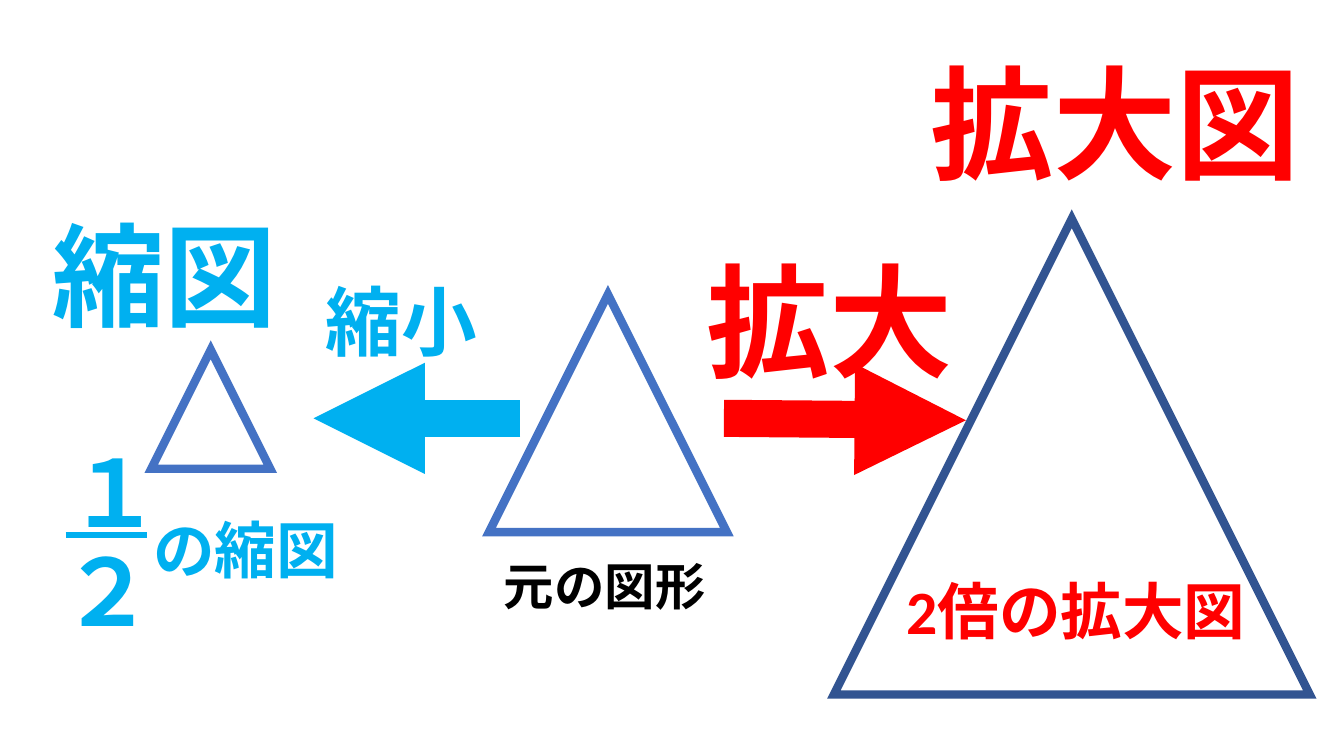
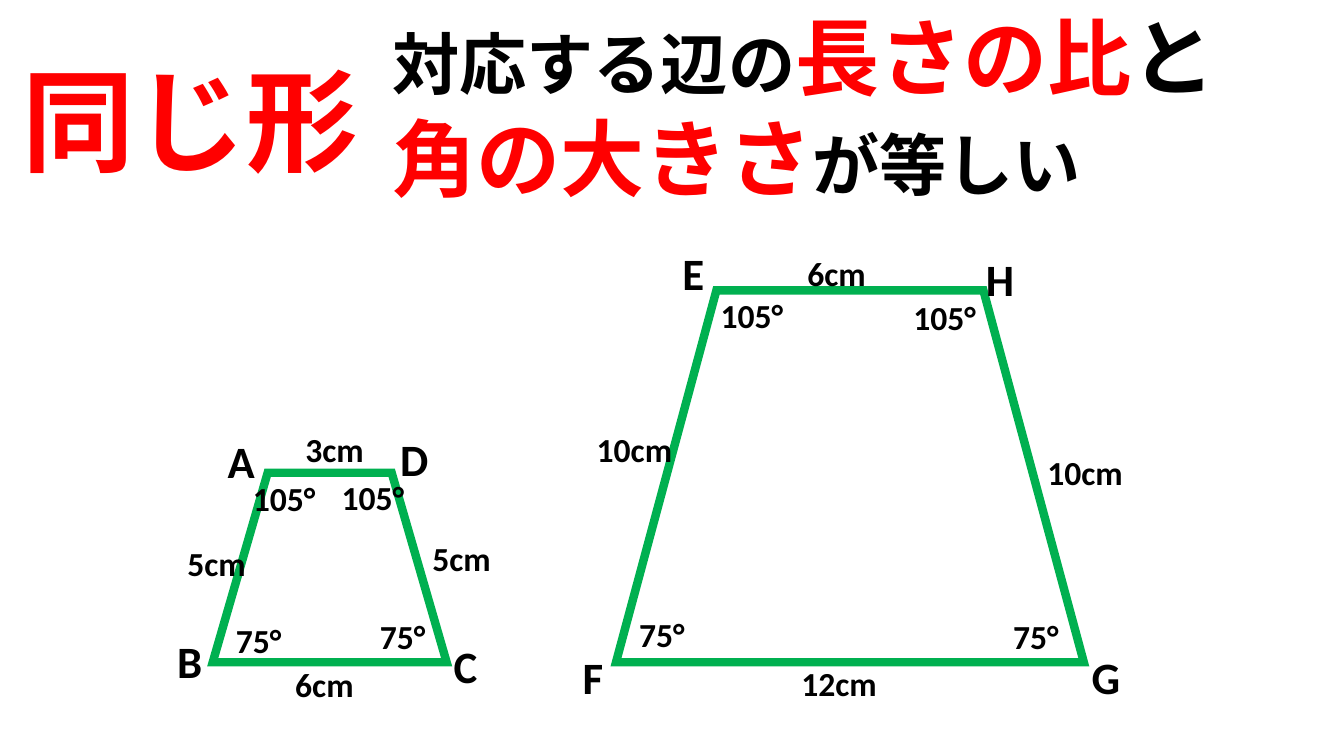
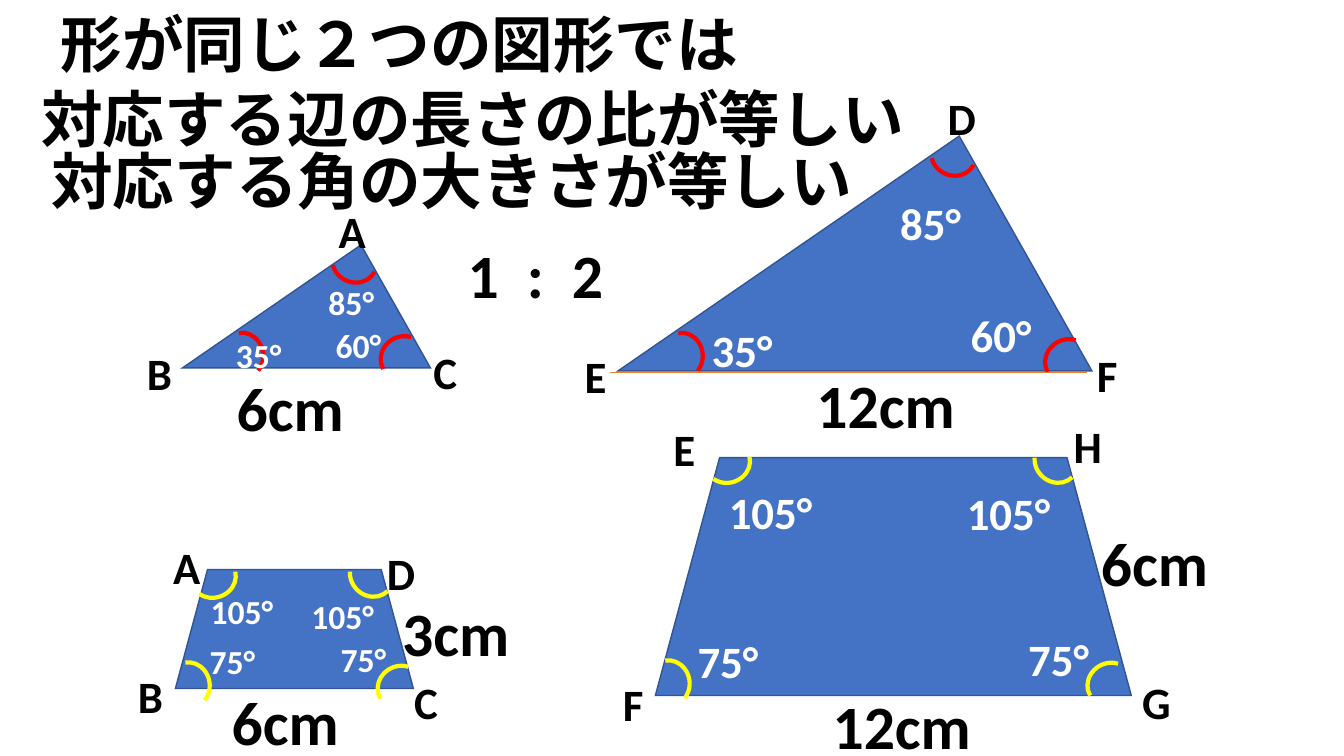
from lxml import etree
from pptx import Presentation
from pptx import util as u
from pptx.dml.color import RGBColor
from pptx.enum import lang, shapes as kinds, text as t
from pptx.oxml.ns import qn

# Shared look
BLACK = RGBColor(0x00, 0x00, 0x00)
WHITE = RGBColor(0xFF, 0xFF, 0xFF)
RED = RGBColor(0xFF, 0x00, 0x00)
SKY = RGBColor(0x00, 0xB0, 0xF0)
BLUE = RGBColor(0x44, 0x72, 0xC4)
NAVY = RGBColor(0x32, 0x54, 0x91)
GREEN = RGBColor(0x00, 0xB0, 0x50)
YELLOW = RGBColor(0xFF, 0xFF, 0x00)
ORANGE = RGBColor(0xED, 0x7D, 0x31)
FONT = "Calibri"
TITLE_ONLY, BLANK = 5, 6

TRIANGLE = kinds.MSO_SHAPE.ISOSCELES_TRIANGLE
TRAPEZOID = kinds.MSO_SHAPE.TRAPEZOID
ARC = kinds.MSO_SHAPE.ARC

# Grid of square cells: 75 rows, 133.33 columns
CELL = u.Inches(7.5) / 75
VERTEX_WIDTH = 6.3
LABEL_WIDTHS = {(24, 3): 10.4, (24, 4): 12.6, (32, 3): 13.4,
                (32, 4): 16.1, (44, 3): 18.3, (44, 4): 18.3}

# Rotation of the angle mark in each corner
BOTTOM_LEFT, BOTTOM_RIGHT = 350.6, 239.1
TOP_LEFT, TOP_RIGHT, APEX = 76.3, 135.4, 117


def cells(*counts):
    return [u.Emu(round(count * CELL)) for count in counts]


# Text
def write(shape, paragraphs, wrap=True):
    """Each paragraph is a list of (text, size, colour) runs."""
    frame = shape.text_frame
    frame.word_wrap = wrap
    frame.auto_size = t.MSO_AUTO_SIZE.SHAPE_TO_FIT_TEXT
    frame.vertical_anchor = t.MSO_ANCHOR.TOP
    for index, runs in enumerate(paragraphs):
        paragraph = frame.add_paragraph() if index else frame.paragraphs[0]
        paragraph.alignment = t.PP_ALIGN.LEFT
        for words, size, colour in runs:
            run = paragraph.add_run()
            run.text = words
            run.font.name = FONT
            run.font.size = u.Pt(size)
            run.font.bold = True
            run.font.color.rgb = colour
            run.font.language_id = lang.MSO_LANGUAGE_ID.JAPANESE


def text_height(paragraphs):
    return 1 + sum(max(size for _, size, _ in runs) / 6 for runs in paragraphs)


def add_paragraphs(shapes, paragraphs, x, y, width, wrap=True):
    box = shapes.add_textbox(*cells(x, y, width, text_height(paragraphs)))
    write(box, paragraphs, wrap)
    return box


def add_text(shapes, words, x, y, width, size, colour=BLACK, wrap=True):
    return add_paragraphs(shapes, [[(words, size, colour)]], x, y, width, wrap)


def set_title(slide, words, x, y, width, size, colour=BLACK):
    title = slide.shapes.title
    paragraphs = [[(words, size, colour)]]
    title.left, title.top, title.width, title.height = cells(
        x, y, width, text_height(paragraphs))
    write(title, paragraphs)


def add_labels(shapes, labels, size, colour=BLACK):
    for words, x, y in labels:
        width = LABEL_WIDTHS[size, len(words)]
        add_text(shapes, words, x, y, width, size, colour)


def add_vertices(shapes, vertices):
    for letter, x, y in vertices:
        add_text(shapes, letter, x, y, VERTEX_WIDTH, 32)


# Figures and lines
def add_figure(shapes, kind, box, line, weight, fill=None, adjust=()):
    figure = shapes.add_shape(kind, *cells(*box))
    figure.shadow.inherit = False
    for index, value in enumerate(adjust):
        figure.adjustments[index] = value
    if fill is None:
        figure.fill.background()
    else:
        figure.fill.solid()
        figure.fill.fore_color.rgb = fill
    figure.line.color.rgb = line
    figure.line.width = u.Pt(weight)
    etree.SubElement(figure.line._get_or_add_ln(), qn("a:miter"), lim="800000")
    return figure


def add_angle_marks(shapes, marks, colour):
    for corner, x, y in marks:
        mark = add_figure(shapes, ARC, (x, y, 4.1, 4.5), colour, 3,
                          adjust=(162, 32.14))
        mark.rotation = corner


def add_line(shapes, start, end, colour, weight, arrow=False):
    line = shapes.add_connector(kinds.MSO_CONNECTOR.STRAIGHT,
                                *cells(*start, *end))
    line.line.color.rgb = colour
    line.line.width = u.Pt(weight)
    if arrow:
        etree.SubElement(line.line._get_or_add_ln(), qn("a:tailEnd"),
                         type="triangle")
    etree.SubElement(line._element.spPr, qn("a:effectLst"))


# Slides
def build_scaling(slide):
    shapes = slide.shapes
    # Original, enlarged and reduced triangles
    add_figure(shapes, TRIANGLE, (48.5, 29.2, 23.6, 23.6), BLUE, 6)
    add_figure(shapes, TRIANGLE, (82.7, 21.7, 47.2, 47.2), NAVY, 6)
    add_figure(shapes, TRIANGLE, (15, 34.7, 11.8, 11.8), BLUE, 6)
    # Arrows
    add_line(shapes, (71.8, 41.5), (95.8, 41.7), RED, 26.5, arrow=True)
    add_line(shapes, (51.6, 41.5), (31.1, 41.5), SKY, 26.5, arrow=True)
    # Names
    for words, x, y, width, size, colour, wrap in (
            ("拡大", 69.1, 23.8, 26.7, 88, RED, False),
            ("縮小", 31.3, 26.8, 17.2, 54, SKY, False),
            ("元の図形", 49, 54.6, 22.2, 36, BLACK, False),
            ("拡大図", 91.3, 4.2, 41, 88, RED, True),
            ("縮図", 4.2, 20, 24.5, 80, SKY, False),
            ("2倍の拡大図", 88.9, 56.3, 38, 44, RED, True),
            ("の縮図", 14.2, 50.3, 22.2, 44, SKY, True)):
        add_text(shapes, words, x, y, width, size, colour, wrap)
    # Fraction
    fraction = shapes.add_group_shape().shapes
    add_text(fraction, "２", 5.1, 52.5, 11.3, 66, SKY, wrap=False)
    add_line(fraction, (6.5, 53.1), (14.6, 53.1), SKY, 4.5)
    add_text(fraction, "１", 5.8, 42.7, 11.3, 66, SKY, wrap=False)


def build_same_shape(slide):
    shapes = slide.shapes
    set_title(slide, "同じ形", 1.2, 4.6, 39.9, 80, RED)
    add_paragraphs(shapes, [
        [("対応する辺の", 48, BLACK), ("長さの比", 60, RED), ("と", 60, BLACK)],
        [("角の大きさ", 60, RED), ("が等しい", 48, BLACK)],
    ], 37.9, 0.1, 85.1)
    # Trapezoids
    add_figure(shapes, TRAPEZOID, (21.1, 46.9, 23.2, 18.8), GREEN, 6,
               adjust=(0.29,))
    add_figure(shapes, TRAPEZOID, (61.1, 28.8, 46.4, 36.9), GREEN, 6,
               adjust=(0.27,))
    # Angles
    for angles in (
            (("75°", 36.7, 60.6), ("75°", 22.4, 61),
             ("105°", 24.1, 46.9), ("105°", 32.9, 46.8)),
            (("75°", 99.5, 60.6), ("75°", 62.4, 60.4),
             ("105°", 70.5, 28.8), ("105°", 89.6, 29))):
        add_labels(shapes.add_group_shape().shapes, angles, 24)
    # Side lengths
    add_labels(shapes, (
        ("5cm", 17.6, 53.4), ("5cm", 41.9, 52.9),
        ("6cm", 28.3, 65.4), ("3cm", 29.3, 42.1),
        ("10cm", 58.2, 42.1), ("10cm", 102.9, 44.3),
        ("12cm", 78.5, 65.3), ("6cm", 79.1, 24.6)), 24)
    # Vertices
    for vertices in (
            (("A", 21.6, 42.5), ("B", 16.6, 62.4),
             ("C", 44, 62.9), ("D", 38.7, 42.3)),
            (("E", 66.7, 23.9), ("F", 56.8, 64),
             ("H", 96.8, 24.5), ("G", 107.3, 64))):
        add_vertices(shapes.add_group_shape().shapes, vertices)


def build_ratio(slide):
    shapes = slide.shapes
    # Figures
    for kind, box, adjust in (
            (TRIANGLE, (18.1, 24.3, 24.6, 12.2), 0.72),
            (TRAPEZOID, (17.4, 56.5, 23.6, 11.8), 0.27),
            (TRIANGLE, (61.3, 13.5, 47, 23.3), 0.72),
            (TRAPEZOID, (65, 45.4, 47.2, 23.6), 0.27)):
        add_figure(shapes, kind, box, NAVY, 1, BLUE, (adjust,))
    # Statements
    set_title(slide, "形が同じ２つの図形では", 5, 0.1, 88.8, 44)
    add_text(shapes, "対応する辺の長さの比が等しい", 3.1, 7.5, 91.8, 44)
    add_text(shapes, "対応する角の大きさが等しい", 4.1, 13.7, 82.4, 44)
    # Angle marks
    add_angle_marks(shapes, (
        (BOTTOM_LEFT, 22, 33), (APEX, 33.1, 23.7), (BOTTOM_RIGHT, 37.9, 33.2),
        (BOTTOM_LEFT, 65.6, 33), (APEX, 92.5, 13.1),
        (BOTTOM_RIGHT, 103.8, 33.5)), RED)
    add_angle_marks(shapes, (
        (BOTTOM_LEFT, 16.7, 65.7), (TOP_RIGHT, 34.8, 54.8),
        (BOTTOM_RIGHT, 37.6, 65.9), (TOP_LEFT, 19.1, 55),
        (BOTTOM_LEFT, 64.3, 65.5), (TOP_RIGHT, 102.7, 43.5),
        (BOTTOM_RIGHT, 108, 65.6), (TOP_LEFT, 70.1, 43.6)), YELLOW)
    # Ratio, with its spaces widened by tracking
    ratio = add_paragraphs(shapes, [
        [(words, 44, BLACK) for words in ("1", " ", ":", " ", "2")]
    ], 45.4, 23, 18.3)
    for run in ratio.text_frame.paragraphs[0].runs[1::2]:
        run.font._element.set("spc", "1000")
    add_line(shapes, (60.5, 36.9), (107.8, 36.9), ORANGE, 0.5)
    # Angles
    add_labels(shapes, (
        ("35°", 22.4, 32.7), ("85°", 31.6, 27.5), ("60°", 32.3, 31.7),
        ("75°", 32.8, 62.9), ("75°", 19.8, 63.1),
        ("105°", 29.9, 58.6), ("105°", 19.9, 58.1)), 24, WHITE)
    add_labels(shapes, (
        ("85°", 88.3, 18.9), ("35°", 69.6, 31.5), ("60°", 95.3, 30),
        ("75°", 101, 62.2), ("75°", 68.2, 62.4),
        ("105°", 94.9, 47.7), ("105°", 71.3, 47.6)), 32, WHITE)
    # Side lengths
    add_labels(shapes, (
        ("6cm", 22.5, 36.2), ("12cm", 80, 35.9),
        ("6cm", 22, 67.4), ("12cm", 81.6, 67.8),
        ("6cm", 108.2, 51.6), ("3cm", 38.9, 58.5)), 44)
    # Vertices
    add_vertices(shapes, (
        ("A", 32.6, 19.7), ("B", 13.6, 33.8), ("C", 42, 33.7),
        ("D", 93, 8.5), ("E", 57, 34.1), ("F", 107.8, 34),
        ("A", 16.2, 53.1), ("B", 12.7, 65.8),
        ("C", 40.1, 66.4), ("D", 37.4, 53.6),
        ("E", 65.8, 41.3), ("F", 60.8, 66.6),
        ("H", 105.5, 41), ("G", 112.3, 66.4)))


def main():
    presentation = Presentation()
    presentation.slide_width = u.Inches(13.33)
    presentation.slide_height = u.Inches(7.5)
    for layout, build in ((BLANK, build_scaling),
                          (TITLE_ONLY, build_same_shape),
                          (TITLE_ONLY, build_ratio)):
        build(presentation.slides.add_slide(presentation.slide_layouts[layout]))
    presentation.save("out.pptx")


if __name__ == "__main__":
    main()
